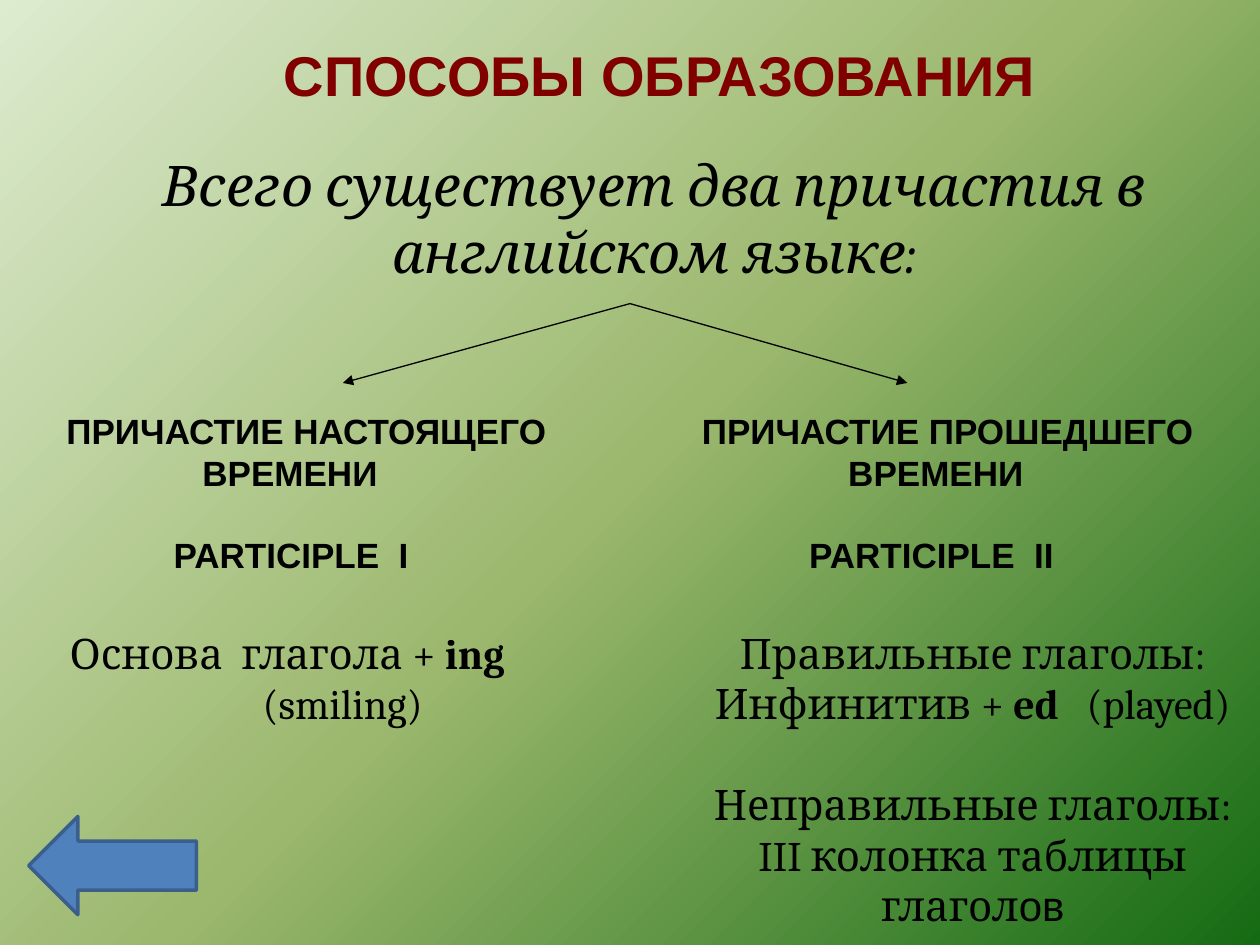
from copy import deepcopy
from dataclasses import dataclass

from lxml import etree
from pptx import Presentation
from pptx.dml.color import RGBColor
from pptx.enum.shapes import MSO_CONNECTOR, MSO_SHAPE
from pptx.enum.text import MSO_ANCHOR, PP_ALIGN
from pptx.oxml.ns import qn
from pptx.util import Cm, Pt

LEFT, CENTER = PP_ALIGN.LEFT, PP_ALIGN.CENTER
TOP = MSO_ANCHOR.TOP
STRAIGHT = MSO_CONNECTOR.STRAIGHT
LEFT_ARROW = MSO_SHAPE.LEFT_ARROW


@dataclass(frozen=True)
class Theme:
    heading_font: str = "Arial"
    body_font: str = "Cambria"
    title_size: int = 32
    label_size: int = 20
    rule_size: int = 24
    title: str = "800000"
    ink: str = "000000"
    button: str = "4F81BD"
    button_edge: str = "3A5F8C"
    background: tuple = ((0, "DDEBCF"), (0.5, "9CB86E"), (1, "156B13"))


THEME = Theme()


@dataclass(frozen=True)
class Box:
    """Position and size in centimetres."""
    left: float
    top: float
    width: float
    height: float

    def lengths(self) -> tuple:
        return Cm(self.left), Cm(self.top), Cm(self.width), Cm(self.height)


@dataclass(frozen=True)
class Style:
    font: str
    size: int
    color: str = THEME.ink
    bold: bool = False
    italic: bool = False
    align: PP_ALIGN = CENTER


@dataclass(frozen=True)
class Span:
    text: str
    bold: bool | None = None
    font: str | None = None


@dataclass(frozen=True)
class Line:
    spans: tuple
    indent: float = 0
    gap: int = 0


TITLE = Style(THEME.heading_font, THEME.title_size, THEME.title, bold=True)
INTRO = Style(THEME.body_font, THEME.title_size, italic=True)
LABEL = Style(THEME.heading_font, THEME.label_size, bold=True, align=LEFT)
RULE = Style(THEME.body_font, THEME.rule_size)


def line(text: str, indent: float = 0, gap: int = 0) -> Line:
    return Line((Span(text),), indent, gap)


def participle(tense: str, number: str, tense_indent: float) -> tuple:
    return (line(f"ПРИЧАСТИЕ {tense}"),
            line("ВРЕМЕНИ", tense_indent),
            line(f"PARTICIPLE  {number}", 2.16, gap=23))


TEXTS = (
    (Box(2.29, 2.9, 21.8, 2.97), INTRO,
     (line("Всего существует два причастия в английском языке:"),)),
    (Box(1.09, 8.13, 10.6, 3.63), LABEL, participle("НАСТОЯЩЕГО", "I", 2.74)),
    (Box(13.9, 8.13, 11.5, 3.63), LABEL, participle("ПРОШЕДШЕГО", "II", 2.95)),
    (Box(0.89, 12.52, 9.8, 2.31), RULE,
     (Line((Span("Основа  глагола + "), Span("ing", bold=True))),
      line("(smiling)", 2.24))),
    (Box(13.31, 12.52, 12.6, 5.38), RULE,
     (line("Правильные глаголы:"),
      Line((Span("Инфинитив + "), Span("ed ", bold=True), Span("  (played)"))),
      line("Неправильные глаголы:", gap=29),
      Line((Span("III колонка таблицы глагол"),
            Span("ов", font=THEME.heading_font))))),
)
FORK = (12.7, 6.12)
BRANCH_ENDS = ((6.91, 7.72), (18.29, 7.72))


def paint_background(s) -> None:
    fill = s.background.fill
    fill.gradient()
    fill.gradient_angle = 315
    stop_list = s.element.find(".//" + qn("a:gsLst"))
    stop_list.append(deepcopy(stop_list[0]))
    for stop, (position, color) in zip(fill.gradient_stops, THEME.background):
        stop.position = position
        stop.color.rgb = RGBColor.from_string(color)


def write(tf, lines: tuple, style: Style) -> None:
    tf.word_wrap = True
    tf.vertical_anchor = TOP
    for i, item in enumerate(lines):
        p = tf.add_paragraph() if i else tf.paragraphs[0]
        p.alignment = style.align
        p.space_before = Pt(item.gap)
        p.font.name, p.font.size = style.font, Pt(style.size)
        p.font.bold, p.font.italic = style.bold, style.italic
        p.font.color.rgb = RGBColor.from_string(style.color)
        if item.indent:
            p._p.get_or_add_pPr().set("marL", str(Cm(item.indent)))
        for span in item.spans:
            r = p.add_run()
            r.text = span.text
            if span.bold is not None:
                r.font.bold = span.bold
            if span.font:
                r.font.name = span.font


def add_title(s, text: str, box: Box) -> None:
    sp = s.shapes.title
    sp.left, sp.top, sp.width, sp.height = box.lengths()
    write(sp.text_frame, (line(text),), TITLE)


def add_branch(s, start: tuple, end: tuple) -> None:
    c = s.shapes.add_connector(STRAIGHT, *map(Cm, start + end))
    c.line.color.rgb = RGBColor.from_string(THEME.ink)
    c.line.width = Pt(0.75)
    etree.SubElement(c.line._get_or_add_ln(), qn("a:tailEnd"), type="triangle")
    etree.SubElement(c._element.spPr, qn("a:effectLst"))


def add_back_button(s, box: Box) -> None:
    sp = s.shapes.add_shape(LEFT_ARROW, *box.lengths())
    sp.shadow.inherit = False
    sp.fill.solid()
    sp.fill.fore_color.rgb = RGBColor.from_string(THEME.button)
    sp.line.color.rgb = RGBColor.from_string(THEME.button_edge)
    sp.line.width = Pt(2)


def main() -> None:
    prs = Presentation()
    prs.slide_width, prs.slide_height = Cm(25.4), Cm(19.05)
    s = prs.slides.add_slide(prs.slide_layouts[5])
    paint_background(s)
    add_title(s, "СПОСОБЫ ОБРАЗОВАНИЯ", Box(3.5, 0.69, 19.6, 1.63))
    for end in BRANCH_ENDS:
        add_branch(s, FORK, end)
    for box, style, lines in TEXTS:
        write(s.shapes.add_textbox(*box.lengths()).text_frame, lines, style)
    add_back_button(s, Box(0.58, 16.46, 3.38, 1.98))
    prs.save("out.pptx")


if __name__ == "__main__":
    main()
